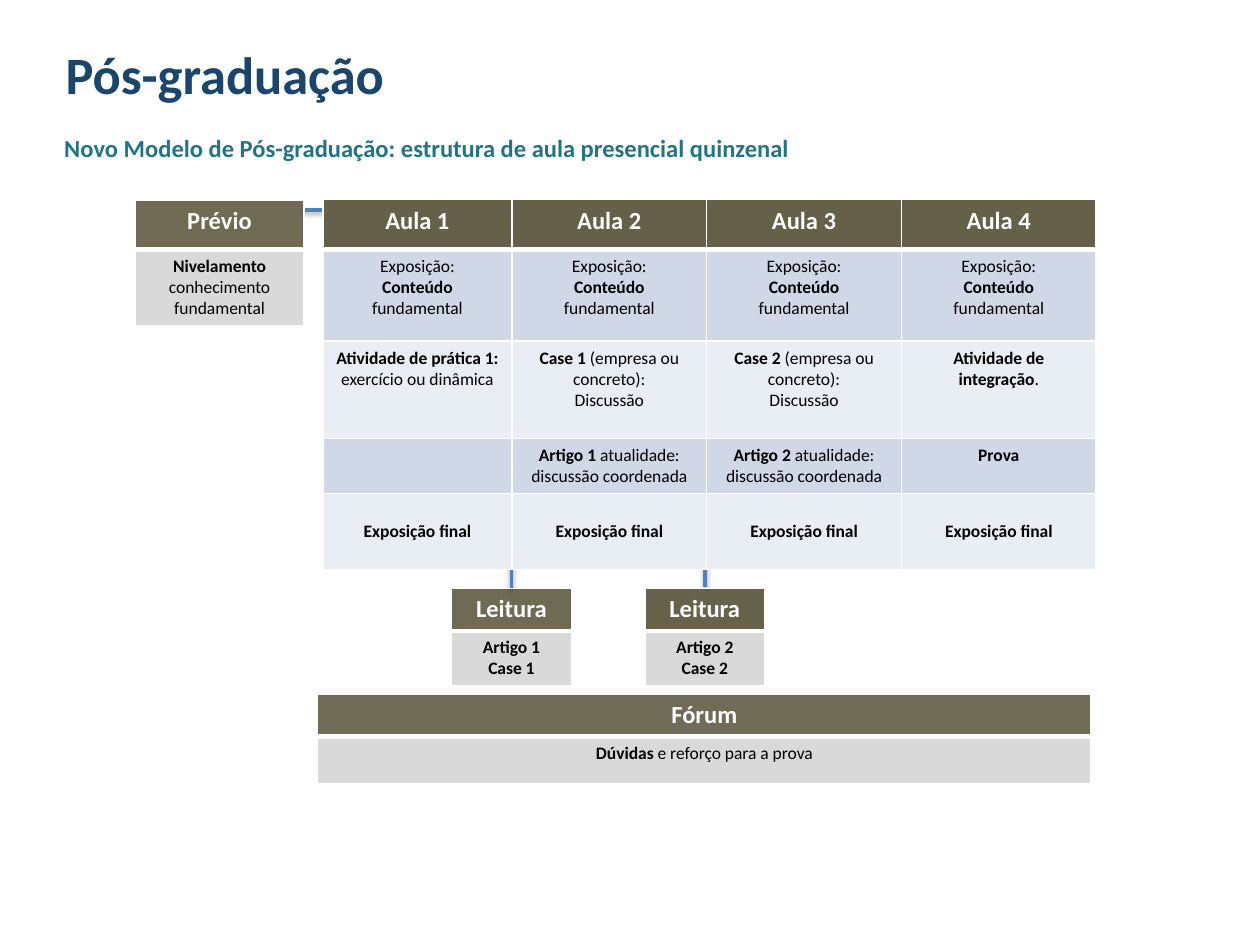
import pptx
import pptx.dml.color
import pptx.enum.shapes
import pptx.enum.text
import pptx.oxml
import pptx.oxml.ns
import pptx.util
from lxml import etree

Pt = pptx.util.Pt
ALIGN = pptx.enum.text.PP_ALIGN
ANCHOR = pptx.enum.text.MSO_ANCHOR
AUTO_SIZE = pptx.enum.text.MSO_AUTO_SIZE

FONT = "Calibri"
COLORS = {
    "title": "1C456B",
    "subtitle": "227485",
    "header": "4A452A",
    "dark_band": "D0D8E8",
    "light_band": "E9EDF4",
    "gray": "D9D9D9",
    "line": "4F81BD",
    "white": "FFFFFF",
    "black": "000000",
}
HEADER_BORDER = 3
CELL_BORDER = 1


def rgb(name):
    return pptx.dml.color.RGBColor.from_string(COLORS[name])


def add_run(paragraph, text, size, color, bold):
    run = paragraph.add_run()
    run.text = text
    run.font.name = FONT
    run.font.size = Pt(size)
    run.font.bold = bold
    run.font.color.rgb = rgb(color)


def fill_placeholder(shape, box, text, size, color, align):
    shape.left, shape.top, shape.width, shape.height = map(Pt, box)
    paragraph = shape.text_frame.paragraphs[0]
    properties = paragraph._p.get_or_add_pPr()
    properties.set("marL", "0")
    properties.set("indent", "0")
    etree.SubElement(properties, pptx.oxml.ns.qn("a:buNone"))
    paragraph.alignment = align
    paragraph.space_before = Pt(0)
    add_run(paragraph, text, size, color, True)


def add_line(slide, start, end):
    connector = slide.shapes.add_connector(
        pptx.enum.shapes.MSO_CONNECTOR.STRAIGHT, *map(Pt, start + end))
    connector.line.color.rgb = rgb("line")
    connector.line.width = Pt(2)
    # Soft shadow falling straight down
    connector._element.spPr.append(pptx.oxml.parse_xml(
        f'<a:effectLst {pptx.oxml.ns.nsdecls("a")}>'
        f'<a:outerShdw blurRad="{Pt(3.1)}" dist="{Pt(1.6)}" dir="5400000" rotWithShape="0">'
        f'<a:srgbClr val="{COLORS["black"]}"><a:alpha val="38000"/></a:srgbClr>'
        '</a:outerShdw></a:effectLst>'))


def set_borders(cell, top, bottom):
    widths = {"lnL": CELL_BORDER, "lnR": CELL_BORDER, "lnT": top, "lnB": bottom}
    properties = cell._tc.get_or_add_tcPr()
    for index, (side, width) in enumerate(widths.items()):
        properties.insert(index, pptx.oxml.parse_xml(
            f'<a:{side} {pptx.oxml.ns.nsdecls("a")} w="{Pt(width)}"><a:solidFill>'
            f'<a:srgbClr val="{COLORS["white"]}"/></a:solidFill></a:{side}>'))


def set_fill(cell, color, opacity=100):
    cell.fill.solid()
    cell.fill.fore_color.rgb = rgb(color)
    if opacity < 100:
        tag = pptx.oxml.ns.qn("a:srgbClr")
        swatch = next(cell._tc.get_or_add_tcPr().iter(tag))
        etree.SubElement(swatch, pptx.oxml.ns.qn("a:alpha"), val=str(opacity * 1000))


def write_cell(cell, text, size, color):
    """One paragraph per line; words between asterisks are bold."""
    frame = cell.text_frame
    for index, line in enumerate(text.split("\n")):
        paragraph = frame.add_paragraph() if index else frame.paragraphs[0]
        paragraph.alignment = ALIGN.CENTER
        for part, words in enumerate(line.split("*")):
            if words:
                add_run(paragraph, words, size, color, part % 2 == 1)


def add_class_table(slide, left, top, widths, heights, rows, fills, opacity):
    """Table with a dark header row above coloured content rows."""
    table = slide.shapes.add_table(
        len(rows), len(widths), Pt(left), Pt(top),
        Pt(sum(widths)), Pt(sum(heights))).table
    table.horz_banding = False
    for column, width in zip(table.columns, widths):
        column.width = Pt(width)
    for index, (row, texts) in enumerate(zip(table.rows, rows)):
        row.height = Pt(heights[index])
        for cell, text in zip(row.cells, texts):
            if index == 0:
                write_cell(cell, f"*{text}*", 14, "white")
                set_fill(cell, "header", opacity)
            else:
                write_cell(cell, text, 10, "black")
                set_fill(cell, fills[index - 1])
            set_borders(cell,
                        top=HEADER_BORDER if index == 1 else CELL_BORDER,
                        bottom=HEADER_BORDER if index == 0 else CELL_BORDER)
    return table


def add_card(slide, left, top, width, heights, header, text, opacity):
    add_class_table(slide, left, top, [width], heights,
                    [[header], [text]], ["gray"], opacity)


def add_headings(slide):
    title, body = slide.shapes.title, slide.placeholders[1]
    fill_placeholder(title, (29.5, 20, 198, 44), "Pós-graduação", 30, "title", ALIGN.CENTER)
    title.text_frame.word_wrap = False
    title.text_frame.vertical_anchor = ANCHOR.MIDDLE
    title.text_frame.auto_size = AUTO_SIZE.SHAPE_TO_FIT_TEXT
    fill_placeholder(
        body, (29.5, 52.5, 652.5, 351.5),
        "Novo Modelo de Pós-graduação: estrutura de aula presencial quinzenal",
        14, "subtitle", ALIGN.JUSTIFY)
    body.text_frame.auto_size = AUTO_SIZE.NONE
    body.text_frame.vertical_anchor = ANCHOR.TOP
    body.text_frame.margin_top = Pt(23.5)


def add_lessons(slide):
    exposition = "Exposição:\n*Conteúdo*\nfundamental"
    cases = [f"*Case {n} *(empresa ou concreto):\nDiscussão" for n in (1, 2)]
    articles = [f"*Artigo {n} *atualidade:\ndiscussão coordenada" for n in (1, 2)]
    rows = [
        [f"Aula {n}" for n in range(1, 5)],
        [exposition] * 4,
        ["*Atividade de prática 1:*\nexercício ou dinâmica", *cases,
         "*Atividade de integração*."],
        ["", *articles, "*Prova*"],
        ["*Exposição final*"] * 4,
    ]
    table = add_class_table(
        slide, 184.5, 114, [108] + [111.3] * 3, [28.5, 52.5, 55.5, 31, 43.5],
        rows, ["dark_band", "light_band"] * 2, 85)
    for cell in table.rows[4].cells:
        cell.vertical_anchor = ANCHOR.MIDDLE


def main():
    presentation = pptx.Presentation()
    presentation.slide_width, presentation.slide_height = Pt(720), Pt(540)
    slide = presentation.slides.add_slide(presentation.slide_layouts[1])
    add_headings(slide)

    # Links from the lessons to the preparation and reading cards
    add_line(slide, (403, 335.5), (403, 319))
    add_line(slide, (292.3, 337), (292.3, 319.5))
    add_line(slide, (173, 120), (184.5, 120))

    # Lessons, then the cards around them
    add_lessons(slide)
    add_card(slide, 181.5, 396.5, 442, [24.5, 27], "Fórum",
             "*Dúvidas* e reforço para a prova", 79)
    add_card(slide, 77.3, 114.5, 96.3, [28, 43], "Prévio",
             "*Nivelamento* conhecimento\nfundamental", 80)
    for number, left, opacity in ((1, 258, 80), (2, 368.5, 84)):
        add_card(slide, left, 336.2, 68.5, [24.3, 31], "Leitura",
                 f"*Artigo {number}*\n*Case {number}*", opacity)

    presentation.save("out.pptx")


if __name__ == "__main__":
    main()
